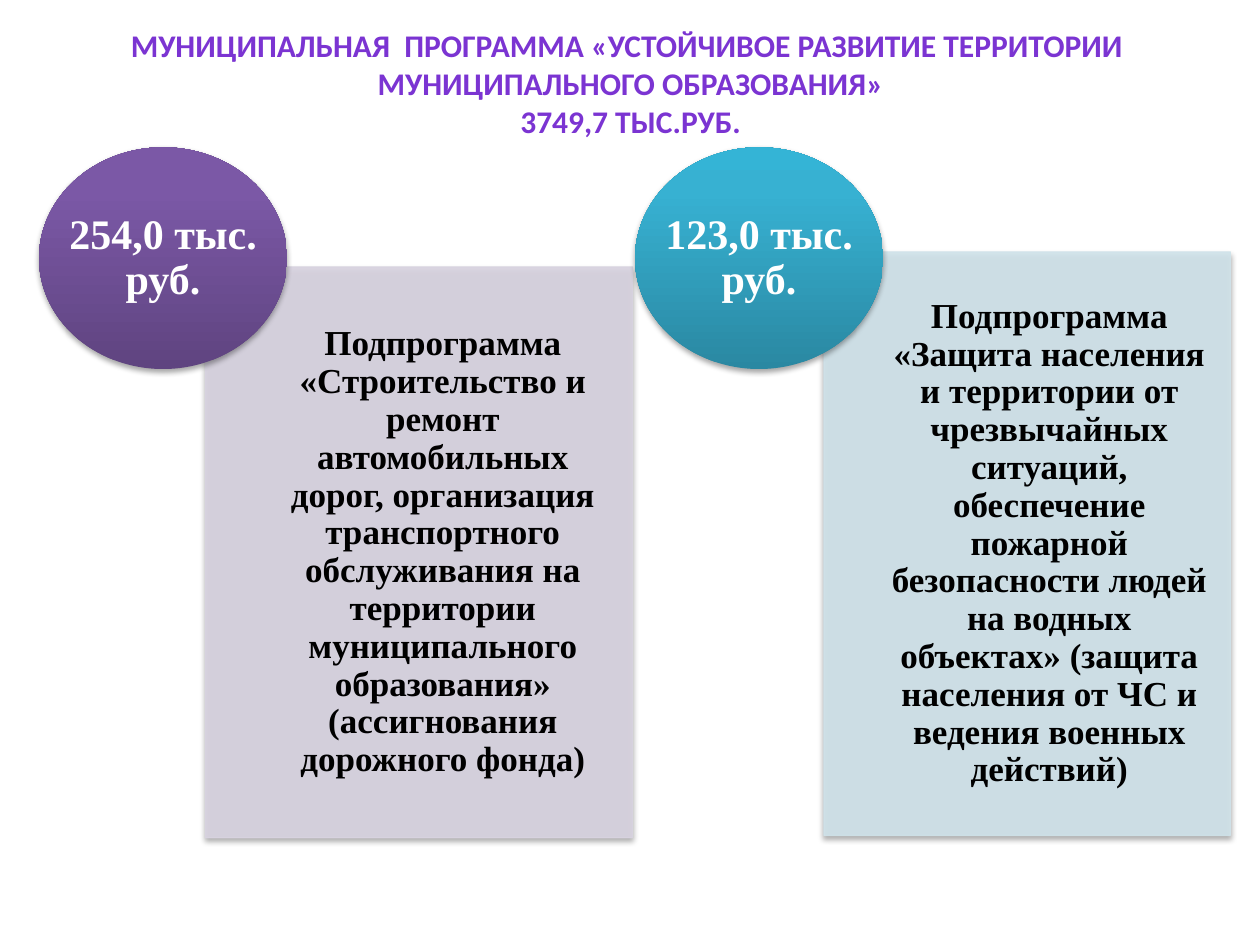
from copy import deepcopy

from lxml import etree
from pptx import Presentation
from pptx.dml.color import RGBColor
from pptx.enum.shapes import MSO_SHAPE
from pptx.enum.text import MSO_ANCHOR, PP_ALIGN
from pptx.oxml.ns import qn
from pptx.util import Pt

RECTANGLE, OVAL = MSO_SHAPE.RECTANGLE, MSO_SHAPE.OVAL
TOP, MIDDLE = MSO_ANCHOR.TOP, MSO_ANCHOR.MIDDLE
CENTER = PP_ALIGN.CENTER

TITLE_VIOLET = RGBColor(0x7B, 0x34, 0xD2)
BLACK = RGBColor(0, 0, 0)
WHITE = RGBColor(0xFF, 0xFF, 0xFF)
PALE_VIOLET = RGBColor(0xD8, 0xD3, 0xE0)
PALE_BLUE = RGBColor(0xD0, 0xE3, 0xEA)
VIOLET_STOPS = (RGBColor(0x5F, 0x44, 0x80), RGBColor(0x7B, 0x58, 0xA6), RGBColor(0x7C, 0x57, 0xA8))
BLUE_STOPS = (RGBColor(0x2A, 0x88, 0xA2), RGBColor(0x37, 0xB1, 0xD2), RGBColor(0x34, 0xB4, 0xD6))
STOP_POSITIONS = (0, 0.8, 1)

SERIF = "Times New Roman"
CIRCLE_TOP, CIRCLE_WIDTH, CIRCLE_HEIGHT = 84.2, 141.8, 126.7
PANEL_INSET = 11.5

TITLE = [
    "МУНИЦИПАЛЬНАЯ  ПРОГРАММА «УСТОЙЧИВОЕ РАЗВИТИЕ ТЕРРИТОРИИ ",
    "МУНИЦИПАЛЬНОГО ОБРАЗОВАНИЯ»",
    "3749,7 ТЫС.РУБ.",
]

# Panel frame: left, top, width, height
SUBPROGRAMMES = [
    {
        "amount": "254,0 тыс. руб.",
        "description": "Подпрограмма «Строительство и ремонт автомобильных дорог, "
                       "организация транспортного обслуживания на территории "
                       "муниципального образования» (ассигнования дорожного фонда)",
        "panel": (117.4, 152.6, 244, 326.2),
        "text_left": 156.2,
        "circle_left": 22.3,
        "panel_color": PALE_VIOLET,
        "circle_stops": VIOLET_STOPS,
    },
    {
        "amount": "123,0 тыс. руб.",
        "description": "Подпрограмма «Защита населения и территории от чрезвычайных "
                       "ситуаций, обеспечение пожарной безопасности людей на водных "
                       "объектах» (защита населения от ЧС и ведения военных действий)",
        "panel": (470.9, 144, 232.2, 333.4),
        "text_left": 507.6,
        "circle_left": 362.9,
        "panel_color": PALE_BLUE,
        "circle_stops": BLUE_STOPS,
    },
]


def add_text(page, frame, lines, *, size, color, font=SERIF, anchor=MIDDLE,
             insets=(0, 0, 0, 0), spacing=0.9):
    box = page.shapes.add_textbox(*map(Pt, frame))
    body = box.text_frame
    body.word_wrap = True
    body.vertical_anchor = anchor
    (body.margin_left, body.margin_top,
     body.margin_right, body.margin_bottom) = map(Pt, insets)
    for index, line in enumerate(lines):
        para = body.add_paragraph() if index else body.paragraphs[0]
        para.alignment = CENTER
        para.line_spacing = spacing
        span = para.add_run()
        span.text = line
        span.font.name = font
        span.font.size = Pt(size)
        span.font.bold = True
        span.font.color.rgb = color


def set_alpha(color_element, percent):
    alpha = etree.SubElement(color_element, qn("a:alpha"))
    alpha.set("val", str(percent * 1000))


def add_shadow(shape):
    shape.shadow.inherit = False
    effects = shape.element.spPr.find(qn("a:effectLst"))
    shadow = etree.SubElement(effects, qn("a:outerShdw"), blurRad=str(Pt(3.1)),
                              dist=str(Pt(1.8)), dir="5400000", rotWithShape="0")
    set_alpha(etree.SubElement(shadow, qn("a:srgbClr"), val=str(BLACK)), 35)


def add_panel(page, frame, color):
    panel = page.shapes.add_shape(RECTANGLE, *map(Pt, frame))
    panel.fill.solid()
    panel.fill.fore_color.rgb = color
    panel.line.color.rgb = color
    panel.line.width = Pt(0.75)
    for color_element in panel.element.spPr.iter(qn("a:srgbClr")):
        set_alpha(color_element, 90)
    add_shadow(panel)


def add_circle(page, frame, colors):
    circle = page.shapes.add_shape(OVAL, *map(Pt, frame))
    circle.line.fill.background()
    circle.fill.gradient()
    circle.fill.gradient_angle = 90
    # The default gradient has two stops, a third is needed
    stop_list = next(circle.element.spPr.iter(qn("a:gsLst")))
    stop_list.append(deepcopy(stop_list[0]))
    for stop, color, position in zip(circle.fill.gradient_stops, colors, STOP_POSITIONS):
        stop.color.rgb = color
        stop.position = position
    add_shadow(circle)


def add_subprogramme(page, item):
    # Panel with its description
    left, top, width, height = item["panel"]
    add_panel(page, item["panel"], item["panel_color"])
    text_frame = (item["text_left"], top, left + width - item["text_left"], height)
    add_text(page, text_frame, [item["description"]], size=20, color=BLACK,
             insets=(0, PANEL_INSET, PANEL_INSET, PANEL_INSET))
    # Circle with the amount
    circle_frame = (item["circle_left"], CIRCLE_TOP, CIRCLE_WIDTH, CIRCLE_HEIGHT)
    add_circle(page, circle_frame, item["circle_stops"])
    add_text(page, circle_frame, [item["amount"]], size=24, color=WHITE)


def main():
    deck = Presentation()
    deck.slide_width, deck.slide_height = Pt(720), Pt(540)
    page = deck.slides.add_slide(deck.slide_layouts[6])

    # Title
    add_text(page, (11.5, 11.5, 697.7, 72.7), TITLE, size=18, color=TITLE_VIOLET,
             font="Calibri", anchor=TOP, insets=(7.2, 3.6, 7.2, 3.6), spacing=1.0)

    # Subprogrammes
    for item in SUBPROGRAMMES:
        add_subprogramme(page, item)

    deck.save("out.pptx")


if __name__ == "__main__":
    main()
